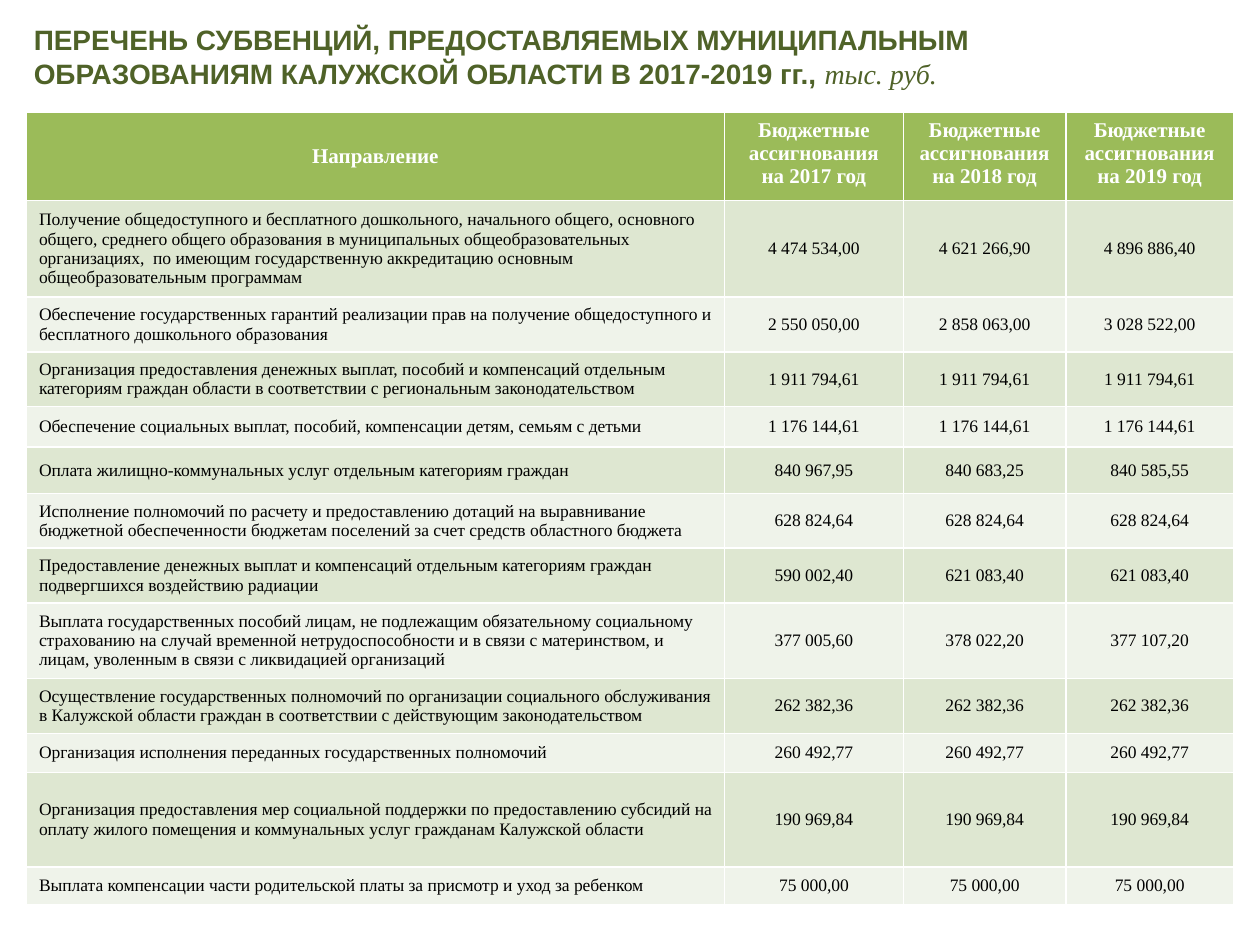
import pptx
import pptx.dml.color
import pptx.enum.text
import pptx.oxml.ns
import pptx.util
from lxml import etree

IN = pptx.util.Inches
ALIGN = pptx.enum.text.PP_ALIGN
ANCHOR = pptx.enum.text.MSO_ANCHOR
COLORS = {
    "title": "4F6228", "header": "9BBB59", "dark_band": "DEE7D1",
    "light_band": "EFF3EA", "white": "FFFFFF", "black": "000000",
}
SERIF = "Times New Roman"


def add_text(p, text, font=SERIF, size=10, color="black", bold=False, italic=False, align=ALIGN.LEFT):
    p.alignment = align
    r = p.add_run()
    r.text = text
    r.font.name, r.font.size = font, pptx.util.Pt(size)
    r.font.bold, r.font.italic = bold, italic
    r.font.color.rgb = pptx.dml.color.RGBColor.from_string(COLORS[color])


def style_cell(cell, fill):
    # Borders come before the fill in the cell properties
    tcPr = cell._tc.get_or_add_tcPr()
    for side in ("lnL", "lnR", "lnT", "lnB"):
        ln = etree.SubElement(tcPr, pptx.oxml.ns.qn(f"a:{side}"), w="12700")
        solid = etree.SubElement(ln, pptx.oxml.ns.qn("a:solidFill"))
        etree.SubElement(solid, pptx.oxml.ns.qn("a:srgbClr"), val=COLORS["white"])
    cell.fill.solid()
    cell.fill.fore_color.rgb = pptx.dml.color.RGBColor.from_string(COLORS[fill])


prs = pptx.Presentation()
prs.slide_width, prs.slide_height = IN(10), IN(7.5)
s = prs.slides.add_slide(prs.slide_layouts[6])

# Title
sp = s.shapes.add_textbox(IN(0.17), IN(0.13), IN(9.58), IN(0.64))
tf = sp.text_frame
tf.word_wrap = True
tf.auto_size = pptx.enum.text.MSO_AUTO_SIZE.SHAPE_TO_FIT_TEXT
title = dict(size=16, color="title", align=ALIGN.JUSTIFY)
add_text(tf.paragraphs[0], "ПЕРЕЧЕНЬ СУБВЕНЦИЙ, ПРЕДОСТАВЛЯЕМЫХ МУНИЦИПАЛЬНЫМ", font="Arial", bold=True, **title)
p = tf.add_paragraph()
add_text(p, "ОБРАЗОВАНИЯМ КАЛУЖСКОЙ ОБЛАСТИ В 2017-2019 гг., ", font="Arial", bold=True, **title)
add_text(p, "тыс. руб.", italic=True, **title)

# Table contents: direction, then the 2017, 2018 and 2019 amounts
header = ["Направление"] + [f"Бюджетные ассигнования на {year} год" for year in (2017, 2018, 2019)]
subventions = [
    ("Получение общедоступного и бесплатного дошкольного, начального общего, основного общего, среднего общего "
     "образования в муниципальных общеобразовательных организациях,  по имеющим государственную аккредитацию "
     "основным общеобразовательным программам", "4 474 534,00", "4 621 266,90", "4 896 886,40"),
    ("Обеспечение государственных гарантий реализации прав на получение общедоступного и бесплатного "
     "дошкольного образования", "2 550 050,00", "2 858 063,00", "3 028 522,00"),
    ("Организация предоставления денежных выплат, пособий и компенсаций отдельным категориям граждан области "
     "в соответствии с региональным законодательством", "1 911 794,61", "1 911 794,61", "1 911 794,61"),
    ("Обеспечение социальных выплат, пособий, компенсации детям, семьям с детьми",
     "1 176 144,61", "1 176 144,61", "1 176 144,61"),
    ("Оплата жилищно-коммунальных услуг отдельным категориям граждан",
     "840 967,95", "840 683,25", "840 585,55"),
    ("Исполнение полномочий по расчету и предоставлению дотаций на выравнивание бюджетной обеспеченности "
     "бюджетам поселений за счет средств областного бюджета", "628 824,64", "628 824,64", "628 824,64"),
    ("Предоставление денежных выплат и компенсаций отдельным категориям граждан подвергшихся воздействию "
     "радиации", "590 002,40", "621 083,40", "621 083,40"),
    ("Выплата государственных пособий лицам, не подлежащим обязательному социальному страхованию на случай "
     "временной нетрудоспособности и в связи с материнством, и лицам, уволенным в связи с ликвидацией "
     "организаций", "377 005,60", "378 022,20", "377 107,20"),
    ("Осуществление государственных полномочий по организации социального обслуживания в Калужской области "
     "граждан в соответствии с действующим законодательством", "262 382,36", "262 382,36", "262 382,36"),
    ("Организация исполнения переданных государственных полномочий",
     "260 492,77", "260 492,77", "260 492,77"),
    ("Организация предоставления мер социальной поддержки по предоставлению субсидий на оплату жилого "
     "помещения и коммунальных услуг гражданам Калужской области", "190 969,84", "190 969,84", "190 969,84"),
    ("Выплата компенсации части родительской платы за присмотр и уход за ребенком",
     "75 000,00", "75 000,00", "75 000,00"),
]
col_widths = [5.54, 1.42, 1.29, 1.33]
row_heights = [0.61, 0.31, 0.37, 0.37, 0.32, 0.37, 0.37, 0.26, 0.28, 0.39, 0.31, 0.75, 0.3]

# Table grid
frame = s.shapes.add_table(len(row_heights), len(col_widths), IN(0.21), IN(0.89), IN(9.58), IN(6.45))
table = frame.table
for column, width in zip(table.columns, col_widths):
    column.width = IN(width)
for row, height in zip(table.rows, row_heights):
    row.height = IN(height)
frame.height = IN(6.45)

# Header row
for c, text in enumerate(header):
    cell = table.cell(0, c)
    style_cell(cell, "header")
    add_text(cell.text_frame.paragraphs[0], text, size=12, color="white", bold=True, align=ALIGN.CENTER)
corner = table.cell(0, 0)
corner.vertical_anchor = ANCHOR.MIDDLE
corner.margin_left = corner.margin_right = corner.margin_top = IN(0.01)
corner.margin_bottom = 0

# Body rows in alternating bands
for i, values in enumerate(subventions, start=1):
    for c, text in enumerate(values):
        cell = table.cell(i, c)
        style_cell(cell, "dark_band" if i % 2 else "light_band")
        cell.vertical_anchor = ANCHOR.MIDDLE
        add_text(cell.text_frame.paragraphs[0], text, align=ALIGN.CENTER if c else ALIGN.LEFT)

prs.save("out.pptx")
